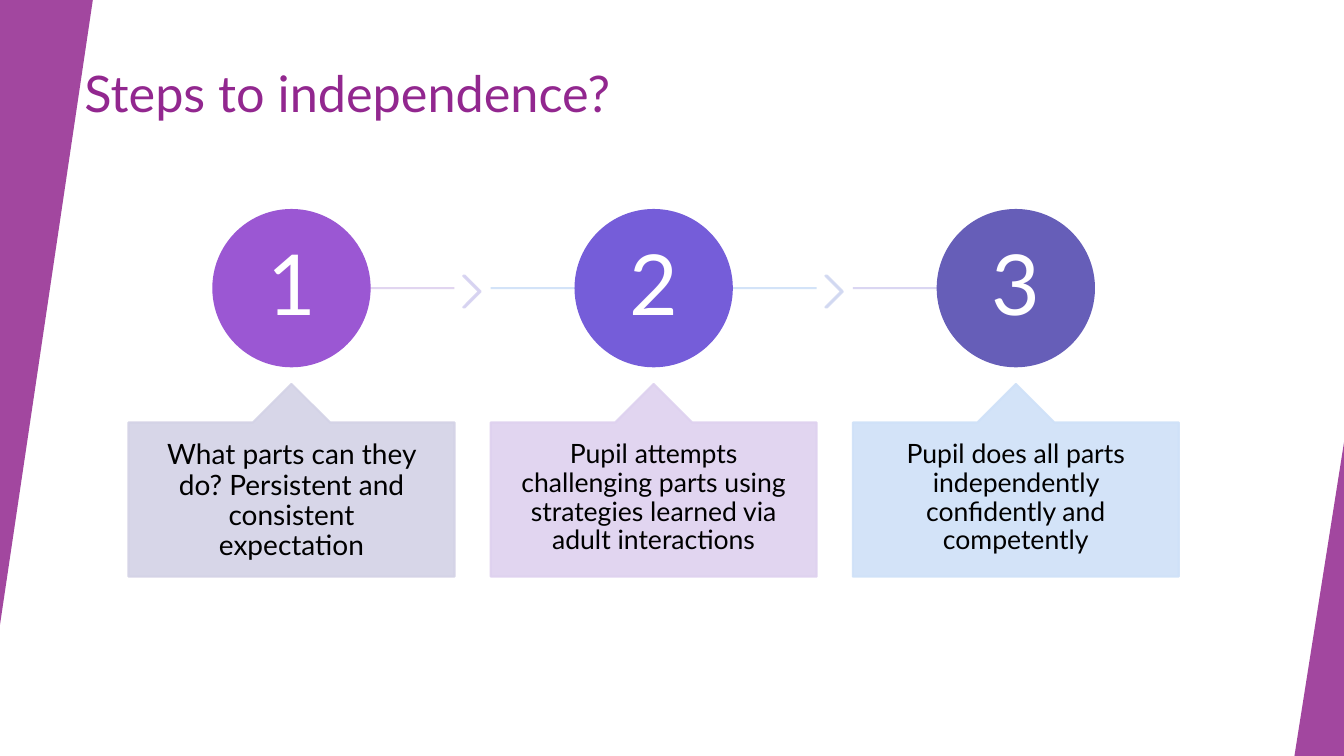
from lxml import etree
from pptx import Presentation
from pptx.dml.color import RGBColor
from pptx.enum.shapes import MSO_CONNECTOR, MSO_SHAPE
from pptx.enum.text import MSO_ANCHOR, PP_ALIGN
from pptx.oxml.ns import qn
from pptx.util import Pt

TRIANGLE, OVAL = MSO_SHAPE.ISOSCELES_TRIANGLE, MSO_SHAPE.OVAL
CHEVRON, CALLOUT = MSO_SHAPE.CHEVRON, MSO_SHAPE.UP_ARROW_CALLOUT
STRAIGHT = MSO_CONNECTOR.STRAIGHT
TOP, MIDDLE = MSO_ANCHOR.TOP, MSO_ANCHOR.MIDDLE
LEFT, CENTER = PP_ALIGN.LEFT, PP_ALIGN.CENTER

FONT = "Lato"
BLACK = RGBColor(0x00, 0x00, 0x00)
WHITE = RGBColor(0xFF, 0xFF, 0xFF)
MAGENTA = RGBColor(0x92, 0x27, 0x8F)
PURPLE = RGBColor(0x9B, 0x57, 0xD3)
VIOLET = RGBColor(0x75, 0x5D, 0xD9)
INDIGO = RGBColor(0x66, 0x5E, 0xB8)
PALE_GREY = RGBColor(0xD3, 0xD2, 0xE6)
PALE_LILAC = RGBColor(0xDE, 0xD1, 0xEF)
PALE_BLUE = RGBColor(0xCF, 0xE1, 0xF8)
PALE_VIOLET = RGBColor(0xD6, 0xD2, 0xF1)
PALE_PERIWINKLE = RGBColor(0xD1, 0xD8, 0xF1)

# Content
TITLE = "Steps to independence?"
STEPS = [
    {"text": "What parts can they do? Persistent and consistent expectation",
     "size": 20, "circle": PURPLE, "card": PALE_GREY,
     "rail": PALE_LILAC, "chevron": PALE_VIOLET},
    {"text": "Pupil attempts challenging parts using strategies learned via adult interactions",
     "size": 19, "circle": VIOLET, "card": PALE_LILAC,
     "rail": PALE_BLUE, "chevron": PALE_PERIWINKLE},
    {"text": "Pupil does all parts independently confidently and competently",
     "size": 19, "circle": INDIGO, "card": PALE_BLUE,
     "rail": PALE_VIOLET, "chevron": None},
]

# Layout in points
SLIDE_WIDTH, SLIDE_HEIGHT = 960, 540
CARD_LEFT, CARD_TOP, CARD_WIDTH, CARD_HEIGHT = 91.8, 274.3, 232.8, 137.6
STEP_PITCH = 258.7
CIRCLE_TOP, CIRCLE_SIZE = 150, 111.6
RAIL_Y = CIRCLE_TOP + CIRCLE_SIZE / 2
CHEVRON_TOP, CHEVRON_WIDTH, CHEVRON_HEIGHT = 197, 12.4, 22.5
CHEVRON_GAP = 6.3
LINE_WIDTH = 1.5


def set_alpha(color_holder, percent):
    color = color_holder.find(".//" + qn("a:srgbClr"))
    etree.SubElement(color, qn("a:alpha")).set("val", str(percent * 1000))


def add_filled_shape(kind, left, top, width, height, color, alpha=100,
                     adjustments=(), outlined=True):
    shape = slide.shapes.add_shape(kind, Pt(left), Pt(top), Pt(width), Pt(height))
    shape.shadow.inherit = False
    for index, value in enumerate(adjustments):
        shape.adjustments[index] = value
    shape.fill.solid()
    shape.fill.fore_color.rgb = color
    if outlined:
        shape.line.color.rgb = color
        shape.line.width = Pt(LINE_WIDTH)
    else:
        shape.line.fill.background()
    if alpha < 100:
        properties = shape._element.spPr
        set_alpha(properties.find(qn("a:solidFill")), alpha)
        if outlined:
            set_alpha(properties.find(qn("a:ln")), alpha)
    return shape


def write_text(shape, text, size, color, align, anchor, inset_x, inset_y):
    frame = shape.text_frame
    frame.text = text
    frame.word_wrap = True
    frame.vertical_anchor = anchor
    frame.margin_left = frame.margin_right = Pt(inset_x)
    frame.margin_top = frame.margin_bottom = Pt(inset_y)
    paragraph = frame.paragraphs[0]
    paragraph.alignment = align
    paragraph.line_spacing = 0.9 if align == CENTER else 1.0
    font = paragraph.runs[0].font
    font.name, font.size, font.color.rgb = FONT, Pt(size), color


def add_rail(start, end, color):
    rail = slide.shapes.add_connector(STRAIGHT, Pt(start), Pt(RAIL_Y), Pt(end), Pt(RAIL_Y))
    rail.line.color.rgb = color
    rail.line.width = Pt(LINE_WIDTH)
    properties = rail._element.spPr
    set_alpha(properties.find(qn("a:ln")), 90)
    etree.SubElement(properties, qn("a:effectLst"))


presentation = Presentation()
presentation.slide_width, presentation.slide_height = Pt(SLIDE_WIDTH), Pt(SLIDE_HEIGHT)
slide = presentation.slides.add_slide(presentation.slide_layouts[6])

# Side wedges
left_wedge = add_filled_shape(TRIANGLE, 0, 0, 66.3, 446.2, MAGENTA, 85, [1], outlined=False)
left_wedge.rotation = 180
add_filled_shape(TRIANGLE, 924.6, 316, 35.4, 224, MAGENTA, 85, [1], outlined=False)

# Steps: rail, chevron, numbered circle and card
for index, step in enumerate(STEPS):
    card_left = CARD_LEFT + index * STEP_PITCH
    card_right = card_left + CARD_WIDTH
    center = card_left + CARD_WIDTH / 2
    rail_start = center if index == 0 else card_left
    rail_end = center if index == len(STEPS) - 1 else card_right
    add_rail(rail_start, rail_end, step["rail"])
    if step["chevron"]:
        add_filled_shape(CHEVRON, card_right + CHEVRON_GAP, CHEVRON_TOP, CHEVRON_WIDTH,
                         CHEVRON_HEIGHT, step["chevron"], 90, [0.9])
    circle = add_filled_shape(OVAL, center - CIRCLE_SIZE / 2, CIRCLE_TOP,
                              CIRCLE_SIZE, CIRCLE_SIZE, step["circle"])
    write_text(circle, str(index + 1), 60, WHITE, CENTER, MIDDLE, 4.3, 4.3)
    card = add_filled_shape(CALLOUT, card_left, CARD_TOP, CARD_WIDTH, CARD_HEIGHT,
                            step["card"], 90, [0.5, 0.2, 0.2, 0.8])
    write_text(card, step["text"], step["size"], BLACK, CENTER, TOP, 18.4, 13)

# Title
title = slide.shapes.add_textbox(Pt(53.3), Pt(41), Pt(676.8), Pt(103.7))
write_text(title, TITLE, 36, MAGENTA, LEFT, TOP, 7.2, 3.6)

presentation.save("out.pptx")
